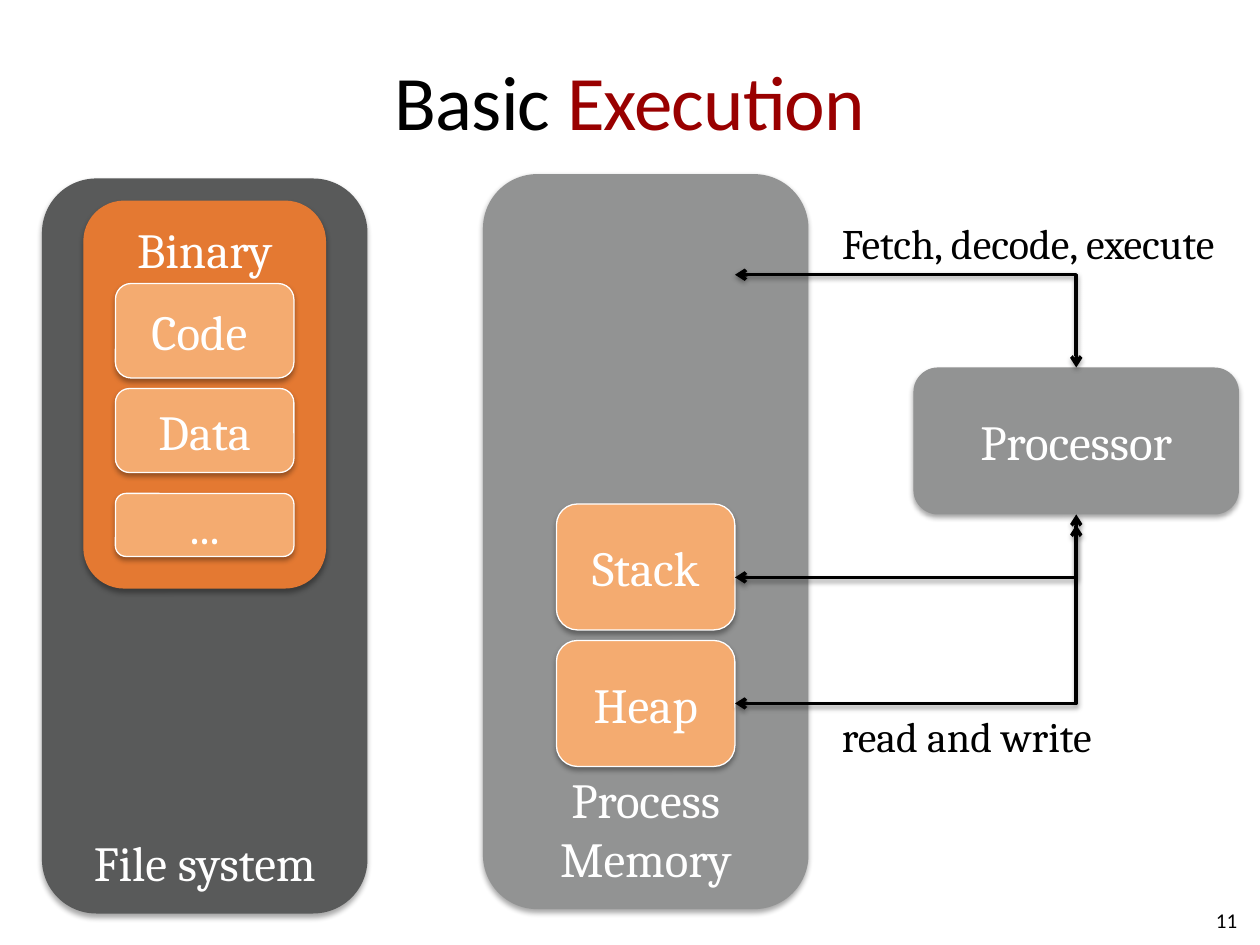
from dataclasses import dataclass

from lxml import etree
from pptx import Presentation
from pptx.dml.color import RGBColor
from pptx.enum import shapes, text
from pptx.oxml import ns
from pptx.util import Pt

COLORS = {
    "black": "000000",
    "white": "FFFFFF",
    "accent": "990000",
    "gray": "929393",
    "dark": "595A5A",
    "binary": "E47932",
    "section": "F4AB70",
}
TOP, MIDDLE, BOTTOM = (
    text.MSO_ANCHOR.TOP, text.MSO_ANCHOR.MIDDLE, text.MSO_ANCHOR.BOTTOM)
LEFT, CENTER, RIGHT = text.PP_ALIGN.LEFT, text.PP_ALIGN.CENTER, text.PP_ALIGN.RIGHT


@dataclass
class Box:
    label: str
    left: float
    top: float
    width: float
    height: float
    fill: str
    line: str = ""
    anchor: text.MSO_ANCHOR = MIDDLE


@dataclass
class Label:
    label: str
    left: float
    top: float
    width: float
    height: float
    size: float
    font: str = "Cambria"
    align: text.PP_ALIGN = LEFT
    anchor: text.MSO_ANCHOR = TOP
    wrap: bool = False


@dataclass
class Arrow:
    start_y: float
    end_y: float


def section(label: str, left: float, top: float, height: float) -> Box:
    return Box(label, left, top, 102, height, "section", "white")


BOXES = [
    Box("Process\vMemory", 276, 99.5, 186, 420, "gray", anchor=BOTTOM),
    Box("File system", 24, 102, 186, 420, "dark", anchor=BOTTOM),
    Box("Binary", 48, 115, 138, 221, "binary", "binary", TOP),
    section("Code ", 66, 162, 54),
    section("Data", 66, 222, 48),
    section("...", 66, 282, 36),
    section("Stack", 318, 288, 72),
    section("Heap", 318, 366, 72),
    Box("Processor", 522, 210, 186, 84, "gray"),
]
MEMORY_X, PROCESSOR_X = 420, 615
ARROWS = [Arrow(157, 210), Arrow(330, 300), Arrow(402, 294)]
LABELS = [
    Label("Fetch, decode, execute", 474, 121, 245.5, 36, 24),
    Label("read and write", 474, 402.5, 166, 36, 24),
    Label("11", 546, 511, 168, 29, 12, "Calibri", RIGHT, MIDDLE, True),
]


def rgb(name: str) -> RGBColor:
    return RGBColor.from_string(COLORS[name])


def style_run(r, size: float, font: str, color: str) -> None:
    r.font.size = Pt(size)
    r.font.name = font
    r.font.color.rgb = rgb(color)


def style_text(tf, size: float, font: str, color: str, align) -> None:
    for p in tf.paragraphs:
        p.alignment = align
        for r in p.runs:
            style_run(r, size, font, color)


def add_shadow(effects, distance: float, opacity: int) -> None:
    """Add a soft shadow that falls straight down."""
    shadow = etree.SubElement(
        effects, ns.qn("a:outerShdw"), blurRad=str(Pt(3.1)),
        dist=str(Pt(distance)), dir="5400000", rotWithShape="0")
    color = etree.SubElement(shadow, ns.qn("a:srgbClr"), val=COLORS["black"])
    etree.SubElement(color, ns.qn("a:alpha"), val=str(opacity * 1000))


def add_box(slide, box: Box) -> None:
    sp = slide.shapes.add_shape(
        shapes.MSO_SHAPE.ROUNDED_RECTANGLE,
        Pt(box.left), Pt(box.top), Pt(box.width), Pt(box.height))
    sp.fill.solid()
    sp.fill.fore_color.rgb = rgb(box.fill)
    if box.line:
        sp.line.color.rgb = rgb(box.line)
        sp.line.width = Pt(0.75)
    else:
        sp.line.fill.background()
    sp.shadow.inherit = False
    add_shadow(sp.element.spPr.find(ns.qn("a:effectLst")), 1.8, 35)
    tf = sp.text_frame
    tf.text = box.label
    tf.vertical_anchor = box.anchor
    style_text(tf, 28, "Cambria", "white", CENTER)


def add_arrow(slide, arrow: Arrow) -> None:
    """Draw a two-headed arrow with one bend from memory to the processor."""
    line = slide.shapes.add_connector(
        shapes.MSO_CONNECTOR.ELBOW, Pt(MEMORY_X), Pt(arrow.start_y),
        Pt(PROCESSOR_X), Pt(arrow.end_y))
    line.line.color.rgb = rgb("black")
    line.line.width = Pt(2)
    props = line.element.spPr
    props.find(ns.qn("a:prstGeom")).set("prst", "bentConnector2")
    for end in ("a:headEnd", "a:tailEnd"):
        etree.SubElement(props.find(ns.qn("a:ln")), ns.qn(end), type="arrow")
    add_shadow(etree.SubElement(props, ns.qn("a:effectLst")), 1.6, 38)


def add_label(slide, label: Label) -> None:
    sp = slide.shapes.add_textbox(
        Pt(label.left), Pt(label.top), Pt(label.width), Pt(label.height))
    tf = sp.text_frame
    tf.text = label.label
    tf.word_wrap = label.wrap
    tf.vertical_anchor = label.anchor
    style_text(tf, label.size, label.font, "black", label.align)


def set_title(slide) -> None:
    title = slide.shapes.title
    title.left, title.top, title.width, title.height = Pt(36), Pt(12), Pt(648), Pt(90)
    tf = title.text_frame
    tf.margin_left = tf.margin_right = 0
    tf.vertical_anchor = MIDDLE
    p = tf.paragraphs[0]
    p.alignment = CENTER
    for words, color in (("Basic", "black"), (" Execution", "accent")):
        r = p.add_run()
        r.text = words
        style_run(r, 44, "Calibri", color)
        r.font._element.set("spc", "-50")


def main() -> None:
    prs = Presentation()
    prs.slide_width, prs.slide_height = Pt(720), Pt(540)
    slide = prs.slides.add_slide(prs.slide_layouts[5])
    set_title(slide)
    for box in BOXES:
        add_box(slide, box)
    for arrow in ARROWS:
        add_arrow(slide, arrow)
    for label in LABELS:
        add_label(slide, label)
    prs.save("out.pptx")


if __name__ == "__main__":
    main()
